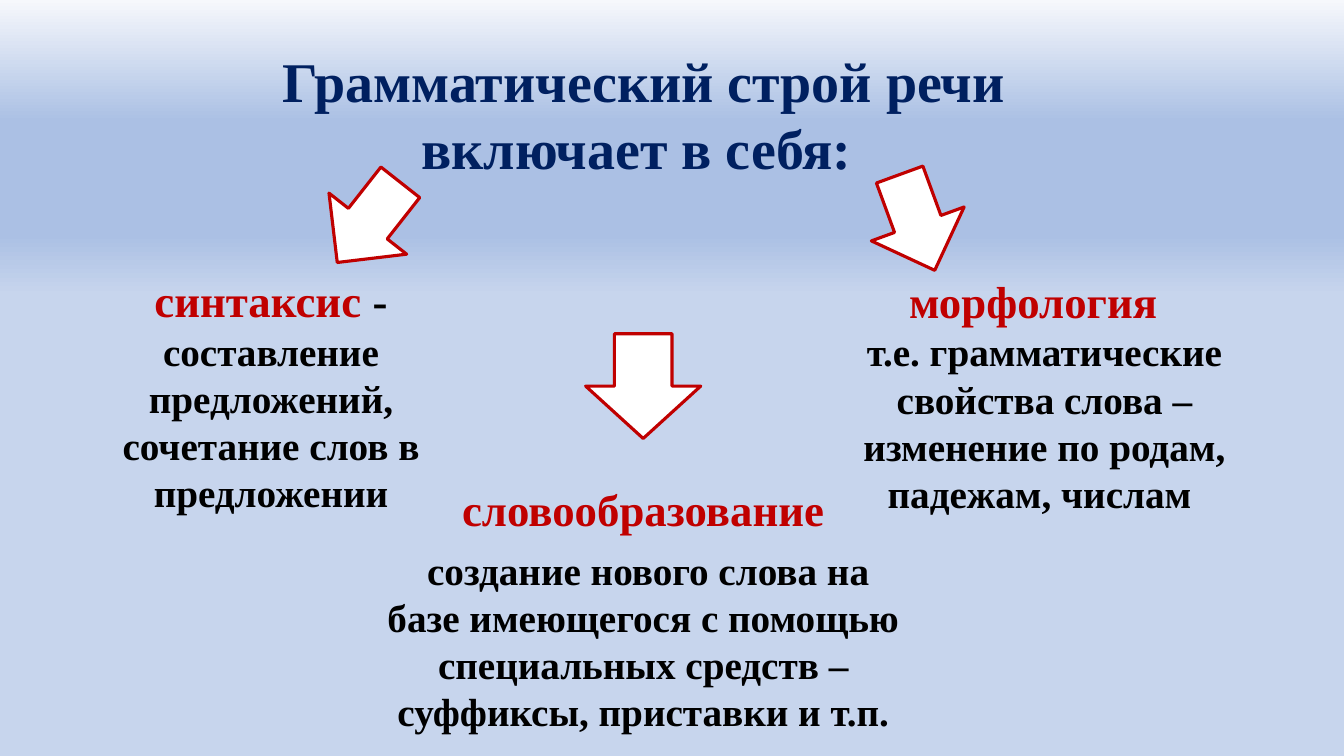
from copy import deepcopy
from dataclasses import dataclass

from pptx import Presentation
from pptx.dml.color import RGBColor
from pptx.enum.shapes import MSO_SHAPE
from pptx.enum.text import MSO_AUTO_SIZE, PP_ALIGN
from pptx.oxml.ns import qn
from pptx.slide import Slide
from pptx.util import Cm, Pt

DOWN = MSO_SHAPE.DOWN_ARROW
CENTER = PP_ALIGN.CENTER
GROW = MSO_AUTO_SIZE.SHAPE_TO_FIT_TEXT
FONT = "Times New Roman"
COLORS = {"navy": "002060", "red": "C00000", "black": "000000", "white": "FFFFFF"}
FADE = [(0, "F6F8FC"), (0.16, "ABC0E4"), (0.31, "ABC0E4"), (0.39, "C7D5ED")]


@dataclass
class Part:
    text: str
    size: int
    color: str


@dataclass
class Block:
    left: float
    top: float
    width: float
    height: float
    lines: list[list[Part]]
    after: float = 0


@dataclass
class Arrow:
    left: float
    top: float
    width: float
    height: float
    turn: float = 0


def head(text: str) -> Part:
    return Part(text, 32, "red")


def body(text: str) -> Part:
    return Part(text, 28, "black")


BLOCKS = [
    Block(1.7, 6.76, 10.26, 6.4, [
        [head("синтаксис "), Part("- ", 32, "black"),
         body("составление предложений, сочетание слов в предложении")],
    ]),
    Block(20.73, 6.78, 11.18, 6.4, [
        [head("морфология  ")],
        [body("т.е. грамматические свойства слова – изменение по родам, падежам, числам ")],
    ]),
    Block(4.14, 1.04, 24.16, 3.68, [
        [Part("Грамматический строй речи включает в себя: ", 40, "navy")],
    ]),
    Block(9.3, 12.01, 13.82, 6.71, [
        [head("словообразование")],
        [body(" создание нового слова на базе имеющегося с помощью специальных средств – "
              "суффиксы, приставки и т.п.")],
    ], 7.5),
]
ARROWS = [
    Arrow(8.05, 4.32, 2.49, 2.57, 38.2),
    Arrow(21.87, 4.32, 2.49, 2.57, 339.9),
    Arrow(14.76, 8.41, 2.9, 2.64),
]


def shade(slide: Slide) -> None:
    fill = slide.background.fill
    fill.gradient()
    fill.gradient_angle = 270
    stops = slide.element.find(".//" + qn("a:gsLst"))
    for _ in range(len(FADE) - len(stops)):
        stops.append(deepcopy(stops[0]))
    for stop, (place, color) in zip(fill.gradient_stops, FADE):
        stop.position = place
        stop.color.rgb = RGBColor.from_string(color)


def write(slide: Slide, block: Block) -> None:
    box = slide.shapes.add_textbox(
        Cm(block.left), Cm(block.top), Cm(block.width), Cm(block.height))
    frame = box.text_frame
    frame.word_wrap = True
    frame.auto_size = GROW
    frame.text = "\n".join("" for _ in block.lines)
    for line, parts in zip(frame.paragraphs, block.lines):
        line.alignment = CENTER
        line.space_after = Pt(block.after)
        for part in parts:
            run = line.add_run()
            run.text = part.text
            run.font.name = FONT
            run.font.size = Pt(part.size)
            run.font.bold = True
            run.font.color.rgb = RGBColor.from_string(COLORS[part.color])


def point(slide: Slide, arrow: Arrow) -> None:
    shape = slide.shapes.add_shape(
        DOWN, Cm(arrow.left), Cm(arrow.top), Cm(arrow.width), Cm(arrow.height))
    shape.rotation = arrow.turn
    shape.shadow.inherit = False
    shape.fill.solid()
    shape.fill.fore_color.rgb = RGBColor.from_string(COLORS["white"])
    shape.line.color.rgb = RGBColor.from_string(COLORS["red"])
    shape.line.width = Pt(2.25)


def main() -> None:
    deck = Presentation()
    deck.slide_width = Cm(33.87)
    deck.slide_height = Cm(19.05)
    slide = deck.slides.add_slide(deck.slide_layouts[6])
    shade(slide)
    for block in BLOCKS:
        write(slide, block)
    for arrow in ARROWS:
        point(slide, arrow)
    deck.save("out.pptx")


if __name__ == "__main__":
    main()
